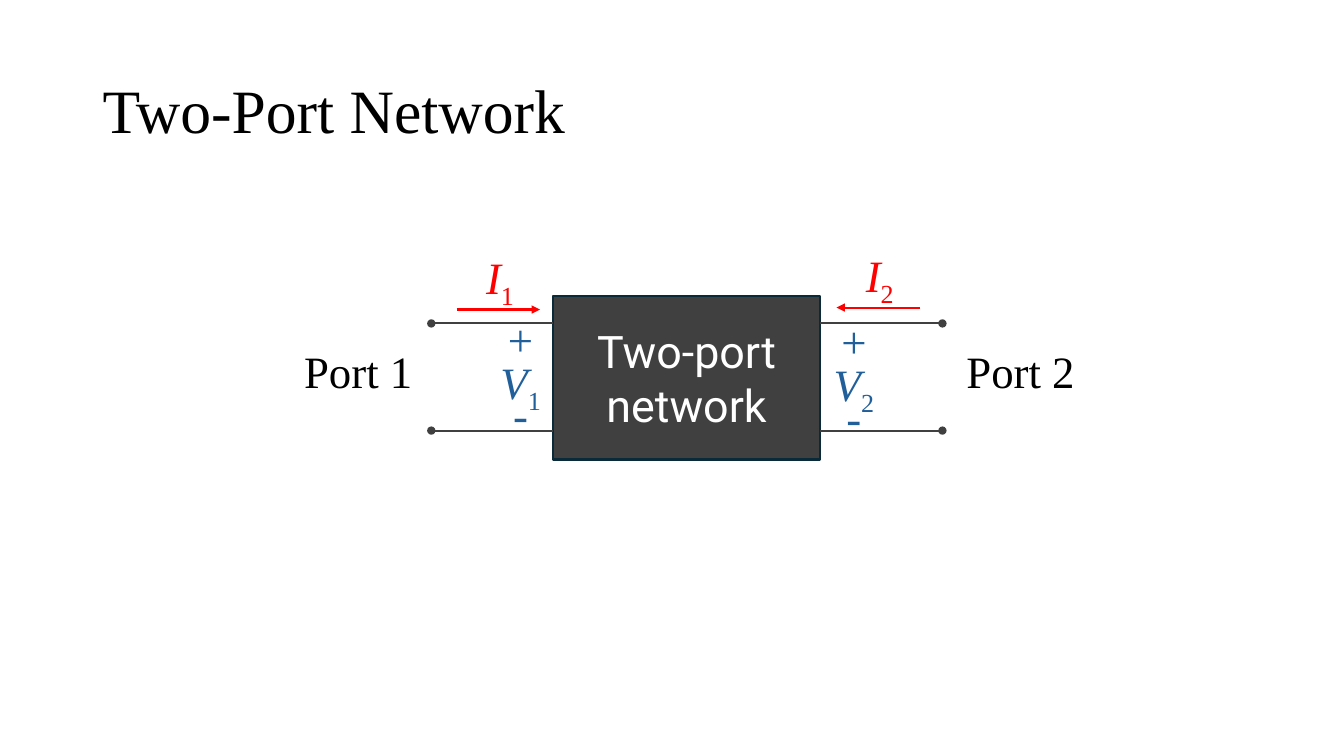
"""Build a slide with the circuit diagram of a two-port network."""
from dataclasses import dataclass

from lxml import etree
from pptx import Presentation
from pptx.dml.color import RGBColor
from pptx.enum.shapes import MSO_CONNECTOR, MSO_SHAPE
from pptx.enum.text import MSO_ANCHOR, MSO_AUTO_SIZE, PP_ALIGN
from pptx.oxml.ns import qn
from pptx.util import Cm, Pt

STRAIGHT = MSO_CONNECTOR.STRAIGHT
RECTANGLE = MSO_SHAPE.RECTANGLE
TOP, MIDDLE = MSO_ANCHOR.TOP, MSO_ANCHOR.MIDDLE
LEFT, CENTER = PP_ALIGN.LEFT, PP_ALIGN.CENTER
FIXED, GROW = MSO_AUTO_SIZE.NONE, MSO_AUTO_SIZE.SHAPE_TO_FIT_TEXT


@dataclass(frozen=True)
class Theme:
    """Colours, fonts and sizes of the slide."""
    ink: str = "000000"
    paper: str = "FFFFFF"
    circuit: str = "404040"
    outline: str = "092A39"
    voltage: str = "215F9A"
    current: str = "FF0000"
    serif: str = "Times New Roman"
    sans: str = "Roboto"
    title_size: float = 44
    label_size: float = 32
    line_width: float = 1.5
    label_height: float = 1.63


@dataclass(frozen=True)
class Port:
    """Horizontal and vertical places that belong to one port."""
    number: str
    inner: float
    outer: float
    label: float
    voltage: float
    voltage_drop: float
    current: float
    arrow_start: float
    arrow_end: float
    arrow_height: float


PORTS = (
    Port("1", 13.94, 10.87, 9.03, 13.12, 0, 12.6, 11.51, 13.61, 7.8),
    Port("2", 20.67, 23.75, 25.72, 21.52, 0.06, 22.17, 23.19, 21.08, 7.75),
)
WIRE_HEIGHTS = (8.15, 10.85)


class Diagram:
    """Draws elements on the current slide in one style."""

    def __init__(self, slide, theme):
        self.slide = slide
        self.theme = theme

    def apply(self, target, values):
        """Set each value as an attribute of the target."""
        for name, value in values.items():
            setattr(target, name, value)

    def add_text(self, shape, text, color, size, font, align, frame_values, subscript=""):
        """Add one formatted paragraph with an optional subscript."""
        frame = shape.text_frame
        self.apply(frame, frame_values)
        paragraph = frame.paragraphs[0]
        paragraph.alignment = align
        for part in filter(None, (text, subscript)):
            run = paragraph.add_run()
            run.text = part
            lowered = part == subscript
            italic = bool(subscript) and not lowered
            self.apply(run.font, {"name": font, "size": Pt(size), "italic": italic})
            run.font.color.rgb = RGBColor.from_string(color)
            if lowered:
                run.font._rPr.set("baseline", "-25000")
        return paragraph

    def title(self, text):
        """Fill and place the title placeholder."""
        theme = self.theme
        shape = self.slide.shapes.title
        self.apply(shape, {"left": Cm(2.33), "top": Cm(1.02),
                           "width": Cm(29.21), "height": Cm(3.68)})
        paragraph = self.add_text(shape, text, theme.ink, theme.title_size, theme.serif, LEFT,
                                  {"vertical_anchor": MIDDLE, "auto_size": FIXED})
        paragraph.line_spacing = 0.9

    def box(self, text, left, top, width, height):
        """Add the filled network block."""
        theme = self.theme
        shape = self.slide.shapes.add_shape(RECTANGLE, Cm(left), Cm(top), Cm(width), Cm(height))
        shape.shadow.inherit = False
        shape.fill.solid()
        shape.fill.fore_color.rgb = RGBColor.from_string(theme.circuit)
        shape.line.color.rgb = RGBColor.from_string(theme.outline)
        shape.line.width = Pt(theme.line_width)
        self.add_text(shape, text, theme.paper, theme.label_size, theme.sans, CENTER,
                      {"vertical_anchor": MIDDLE, "word_wrap": True})

    def line(self, start, end, height, color, ending):
        """Add a horizontal line with the given ending."""
        connector = self.slide.shapes.add_connector(
            STRAIGHT, Cm(start), Cm(height), Cm(end), Cm(height))
        connector.line.color.rgb = RGBColor.from_string(color)
        connector.line.width = Pt(self.theme.line_width)
        outline = connector.line._get_or_add_ln()
        etree.SubElement(outline, qn("a:tailEnd"), type=ending)
        etree.SubElement(connector._element.spPr, qn("a:effectLst"))

    def label(self, text, center, top, width, color, subscript=""):
        """Add a centred label with an optional subscript."""
        theme = self.theme
        shape = self.slide.shapes.add_textbox(
            Cm(center - width / 2), Cm(top), Cm(width), Cm(theme.label_height))
        self.add_text(shape, text, color, theme.label_size, theme.serif, CENTER,
                      {"vertical_anchor": TOP, "word_wrap": False, "auto_size": GROW}, subscript)

    def port(self, port):
        """Add wires, voltage and current of one port."""
        theme = self.theme
        for height in WIRE_HEIGHTS:
            self.line(port.inner, port.outer, height, theme.circuit, "oval")
        self.label(f"Port {port.number}", port.label, 8.53, 3.28, theme.ink)
        for text, top, width, subscript in (("+", 7.72, 1.14, ""), ("-", 9.63, 0.89, ""),
                                            ("V", 8.81, 1.57, port.number)):
            self.label(text, port.voltage, top + port.voltage_drop, width,
                       theme.voltage, subscript)
        self.line(port.arrow_start, port.arrow_end, port.arrow_height, theme.current, "triangle")
        self.label("I", port.current, port.arrow_height - theme.label_height, 1.57,
                   theme.current, port.number)


def main():
    """Build and save the presentation."""
    presentation = Presentation()
    presentation.slide_width, presentation.slide_height = Cm(33.87), Cm(19.05)
    slide = presentation.slides.add_slide(presentation.slide_layouts[5])
    diagram = Diagram(slide, Theme())
    diagram.title("Two-Port Network")
    diagram.box("Two-port network", 13.94, 7.47, 6.73, 4.11)
    for port in PORTS:
        diagram.port(port)
    presentation.save("out.pptx")


if __name__ == "__main__":
    main()
